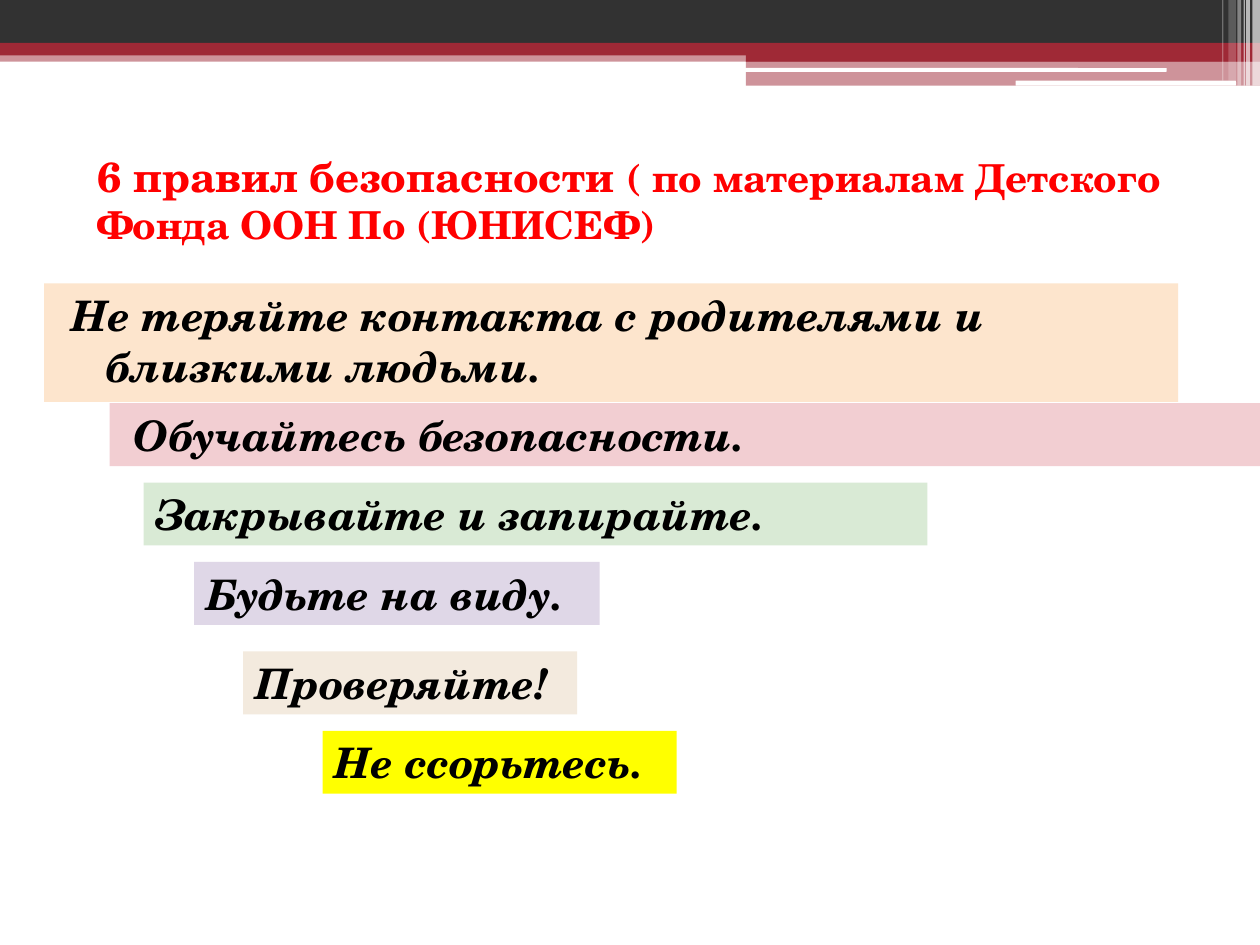
"""Build the slide with the six safety rules, laid out on a grid of 100 columns by 75 rows."""
from dataclasses import dataclass

from lxml import etree
from pptx import Presentation
from pptx import util as u
from pptx.dml.color import RGBColor
from pptx.enum import shapes, text
from pptx.oxml.ns import qn

COLS, ROWS = 100, 75
WIDTH, HEIGHT = u.Inches(10), u.Inches(7.5)
FONT = "TeX Gyre Schola"
DARK, CRIMSON, WHITE = "323232", "9F2936", "FFFFFF"


@dataclass
class Box:
    col: float
    row: float
    cols: float
    rows: float


@dataclass
class Band:
    box: Box
    color: str
    opacity: int = 100
    rounded: bool = False


@dataclass
class Rule:
    box: Box
    color: str
    words: str
    wrap: bool = True
    margin: float = 0
    indent: float = 0
    before: float = 0


def stripe(col: float, cols: float, rows: float, opacity: int) -> Band:
    return Band(Box(col, 0, cols, rows), WHITE, opacity)


BANDS = [
    Band(Box(0, 4, 100, 0.9), CRIMSON, 50),
    Band(Box(0, 0, 100, 3.4), DARK),
    Band(Box(0, 3.4, 100, 1), CRIMSON),
    Band(Box(59.2, 3.9, 40.8, 1), CRIMSON),
    Band(Box(59.2, 4.8, 40.8, 2), CRIMSON, 50),
    Band(Box(59.1, 5.4, 33.5, 0.3), WHITE, rounded=True),
    Band(Box(80.6, 6.4, 17.5, 0.4), WHITE, rounded=True),
    stripe(99.4, 0.6, 6.8, 65),
    stripe(98.9, 0.3, 6.8, 65),
    stripe(98.7, 0.1, 6.8, 60),
    stripe(98.2, 0.3, 6.8, 40),
    stripe(97.5, 0.6, 6.4, 20),
    stripe(97, 0.1, 6.4, 30),
]

TITLE = Box(6.7, 9.9, 90, 11.7)
TITLE_RUNS = [
    ("6 правил безопасности ", 24),
    ("( по материалам Детского Фонда ООН По (ЮНИСЕФ)", 22),
]

RULES = [
    Rule(Box(3.5, 22.5, 90, 9.4), "FDE5CD",
         "Не теряйте контакта с родителями и близкими людьми.",
         margin=4, indent=-2.8, before=3),
    Rule(Box(8.7, 32, 91.3, 5), "F2CED2", " Обучайтесь безопасности."),
    Rule(Box(11.4, 38.3, 62.2, 5), "D9EAD5", "Закрывайте и запирайте."),
    Rule(Box(15.4, 44.6, 32.2, 5), "DFD7E7", "Будьте на виду.", wrap=False),
    Rule(Box(19.3, 51.7, 26.5, 5), "F3EADE", "Проверяйте!", wrap=False),
    Rule(Box(25.6, 58, 28.1, 5), "FFFF00", "Не ссорьтесь.", wrap=False),
]


def rgb(color: str) -> RGBColor:
    return RGBColor.from_string(color)


def across(cols: float) -> int:
    return round(WIDTH * cols / COLS)


def down(rows: float) -> int:
    return round(HEIGHT * rows / ROWS)


def place(box: Box) -> tuple[int, int, int, int]:
    return across(box.col), down(box.row), across(box.cols), down(box.rows)


def paint(sp, color: str) -> None:
    sp.fill.solid()
    sp.fill.fore_color.rgb = rgb(color)


def style(font, color: str, italic: bool = False) -> None:
    font.name, font.bold, font.italic = FONT, True, italic
    font.color.rgb = rgb(color)


def draw_band(s, band: Band) -> None:
    kind = shapes.MSO_SHAPE.ROUNDED_RECTANGLE if band.rounded else shapes.MSO_SHAPE.RECTANGLE
    sp = s.shapes.add_shape(kind, *place(band.box))
    sp.shadow.inherit = False
    sp.line.fill.background()
    paint(sp, band.color)
    if band.opacity < 100:
        clr = sp.fill._xPr.find(".//" + qn("a:srgbClr"))
        etree.SubElement(clr, qn("a:alpha")).set("val", str(band.opacity * 1000))


def draw_title(s) -> None:
    sp = s.shapes.title
    sp.left, sp.top, sp.width, sp.height = place(TITLE)
    tf = sp.text_frame
    tf.auto_size = text.MSO_AUTO_SIZE.NONE
    tf.vertical_anchor = text.MSO_ANCHOR.MIDDLE
    p = tf.paragraphs[0]
    p.alignment = text.PP_ALIGN.LEFT
    style(p.font, "FF0000")
    for words, size in TITLE_RUNS:
        r = p.add_run()
        r.text = words
        r.font.size = u.Pt(size)


def draw_rule(s, rule: Rule) -> None:
    sp = s.shapes.add_textbox(*place(rule.box))
    paint(sp, rule.color)
    tf = sp.text_frame
    tf.word_wrap = rule.wrap
    p = tf.paragraphs[0]
    p.text = rule.words
    p.space_before = u.Pt(rule.before)
    style(p.font, "000000", italic=True)
    p.font.size = u.Pt(24)
    if rule.margin:
        pPr = p._p.get_or_add_pPr()
        pPr.set("marL", str(across(rule.margin)))
        pPr.set("indent", str(across(rule.indent)))


def main() -> None:
    prs = Presentation()
    prs.slide_width, prs.slide_height = WIDTH, HEIGHT
    s = prs.slides.add_slide(prs.slide_layouts[5])
    for band in BANDS:
        draw_band(s, band)
    draw_title(s)
    for rule in RULES:
        draw_rule(s, rule)
    prs.save("out.pptx")


if __name__ == "__main__":
    main()
